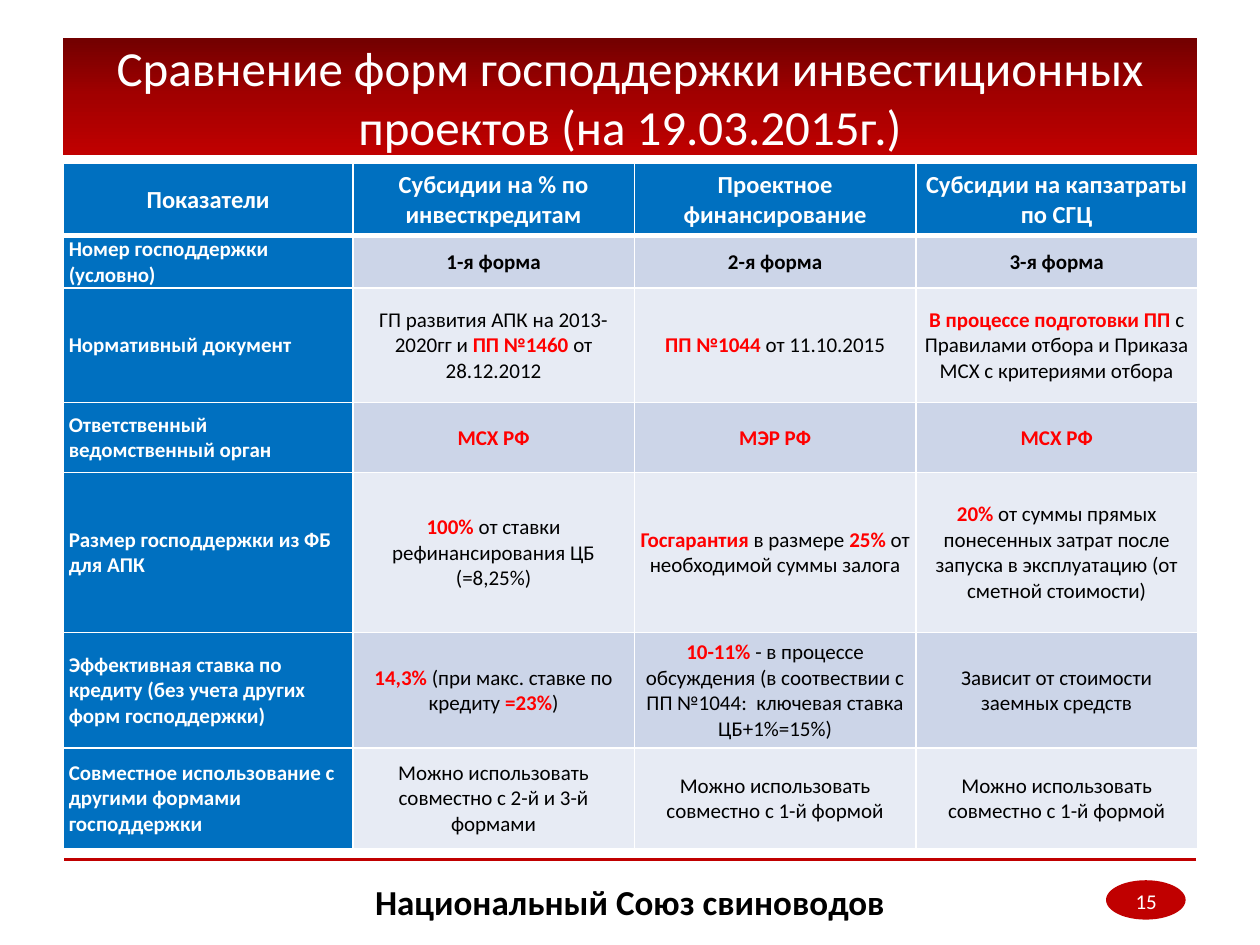
"""Build a slide comparing forms of state support for investment projects."""
from copy import deepcopy

from lxml import etree
from pptx import Presentation
from pptx.dml.color import RGBColor
from pptx.enum import shapes, text
from pptx.oxml import ns
from pptx.util import Pt

WHITE = RGBColor(255, 255, 255)
BLACK = RGBColor(0, 0, 0)
RED = RGBColor(255, 0, 0)
CRIMSON = RGBColor(192, 0, 0)
TITLE_SHADES = (RGBColor(0x72, 0, 0), RGBColor(0xA2, 0, 0), CRIMSON)
BLUE = RGBColor(0, 0x70, 0xC0)
BANDS = (RGBColor(0xE7, 0xEB, 0xF4), RGBColor(0xCC, 0xD5, 0xE8))
CENTER = text.PP_ALIGN.CENTER

ROWS = [
    ("Показатели", "Субсидии на % по инвесткредитам",
     "Проектное финансирование", "Субсидии на капзатраты по СГЦ"),
    ("Номер господдержки (условно)", "1-я форма", "2-я форма", "3-я форма"),
    ("Нормативный документ",
     "ГП развития АПК на 2013-2020гг и *ПП №1460 *от 28.12.2012",
     "*ПП №1044 *от 11.10.2015",
     "*В процессе подготовки ПП *с Правилами отбора и Приказа МСХ с критериями отбора"),
    ("Ответственный ведомственный орган", "*МСХ РФ*", "*МЭР РФ*", "*МСХ РФ*"),
    ("Размер господдержки из ФБ для АПК",
     "*100% *от ставки рефинансирования ЦБ (=8,25%)",
     "*Госгарантия* в размере *25% *от необходимой суммы залога",
     "*20% *от суммы прямых понесенных затрат после запуска в эксплуатацию "
     "(от сметной стоимости)"),
    ("Эффективная ставка по кредиту (без учета других форм господдержки)",
     "*14,3% *(при макс. ставке по кредиту *=23%*)",
     "*10-11%* - в процессе обсуждения (в соотвествии с ПП №1044:  ключевая ставка ЦБ+1%=15%)",
     "Зависит от стоимости заемных средств"),
    ("Совместное использование с другими формами господдержки",
     "Можно использовать совместно с 2-й и 3-й формами",
     "Можно использовать совместно с 1-й формой",
     "Можно использовать совместно с 1-й формой"),
]
ROW_HEIGHTS = (41, 29.5, 65.5, 40, 91.5, 66, 57.5)
COLUMN_WIDTHS = (165.3, 160.9, 160.9, 160.9)


def write(frame, content, size=12, color=BLACK, bold=False, align=CENTER):
    """Fill a frame with one paragraph; parts between asterisks are red and bold."""
    frame.word_wrap = True
    paragraph = frame.paragraphs[0]
    paragraph.alignment = align
    for index, part in enumerate(content.split("*")):
        if part:
            run = paragraph.add_run()
            run.text = part
            run.font.name = "Calibri"
            run.font.size = Pt(size)
            run.font.bold = bold or index % 2 == 1
            run.font.color.rgb = RED if index % 2 else color


def set_borders(cell, top=1, bottom=1):
    """Give a cell white borders of the widths stated."""
    properties = cell._tc.get_or_add_tcPr()
    for side, width in (("L", 1), ("R", 1), ("T", top), ("B", bottom)):
        line = etree.SubElement(properties, ns.qn(f"a:ln{side}"), w=str(Pt(width)))
        fill = etree.SubElement(line, ns.qn("a:solidFill"))
        etree.SubElement(fill, ns.qn("a:srgbClr"), val=str(WHITE))


presentation = Presentation()
presentation.slide_width, presentation.slide_height = Pt(720), Pt(540)
slide = presentation.slides.add_slide(presentation.slide_layouts[6])

oval = slide.shapes.add_shape(shapes.MSO_SHAPE.OVAL, Pt(632), Pt(503), Pt(45.5), Pt(22.5))
oval.shadow.inherit = False
oval.fill.solid()
oval.fill.fore_color.rgb = CRIMSON
oval.line.fill.background()

rule = slide.shapes.add_connector(
    shapes.MSO_CONNECTOR.STRAIGHT, Pt(683.5), Pt(491), Pt(36.5), Pt(491))
rule.line.color.rgb = CRIMSON
rule.line.width = Pt(1.5)
etree.SubElement(rule._element.spPr, ns.qn("a:effectLst"))

table = slide.shapes.add_table(
    len(ROWS), len(COLUMN_WIDTHS), Pt(36.3), Pt(93.5),
    Pt(sum(COLUMN_WIDTHS)), Pt(sum(ROW_HEIGHTS))).table
for column, width in zip(table.columns, COLUMN_WIDTHS):
    column.width = Pt(width)
for row, height in zip(table.rows, ROW_HEIGHTS):
    row.height = Pt(height)

for r, labels in enumerate(ROWS):
    for c, label in enumerate(labels):
        cell = table.cell(r, c)
        heading = r == 0 or c == 0
        cell.vertical_anchor = text.MSO_ANCHOR.MIDDLE
        cell.margin_left = cell.margin_right = Pt(3 if r else 0.7)
        cell.margin_top, cell.margin_bottom = Pt(0.7), 0
        set_borders(cell, top=3 if r == 1 else 1, bottom=3 if r == 0 else 1)
        cell.fill.solid()
        cell.fill.fore_color.rgb = BLUE if heading else BANDS[r % 2]
        write(cell.text_frame, label, size=12 if r else 14,
              color=WHITE if heading else BLACK, bold=heading or r == 1,
              align=text.PP_ALIGN.LEFT if r and c == 0 else CENTER)

title = slide.shapes.add_shape(shapes.MSO_SHAPE.RECTANGLE, Pt(36), Pt(21.6), Pt(648), Pt(67))
title.shadow.inherit = False
title.line.fill.background()
title.fill.gradient()
title.fill.gradient_angle = 270
first_stop = title.fill._fill._gradFill.gsLst[0]
first_stop.addnext(deepcopy(first_stop))
for stop, shade, position in zip(title.fill.gradient_stops, TITLE_SHADES, (0, 0.5, 1)):
    stop.color.rgb = shade
    stop.position = position
title.text_frame.vertical_anchor = text.MSO_ANCHOR.MIDDLE
write(title.text_frame,
      "Сравнение форм господдержки инвестиционных проектов (на 19.03.2015г.)",
      size=28, color=WHITE)

for left, width, label, style in (
        (130.3, 459.4, "Национальный Союз свиноводов", {"size": 20, "bold": True}),
        (622, 66, "15", {"color": WHITE})):
    box = slide.shapes.add_textbox(Pt(left), Pt(500.5), Pt(width), Pt(29))
    box.text_frame.vertical_anchor = text.MSO_ANCHOR.MIDDLE
    write(box.text_frame, label, **style)

presentation.save("out.pptx")
